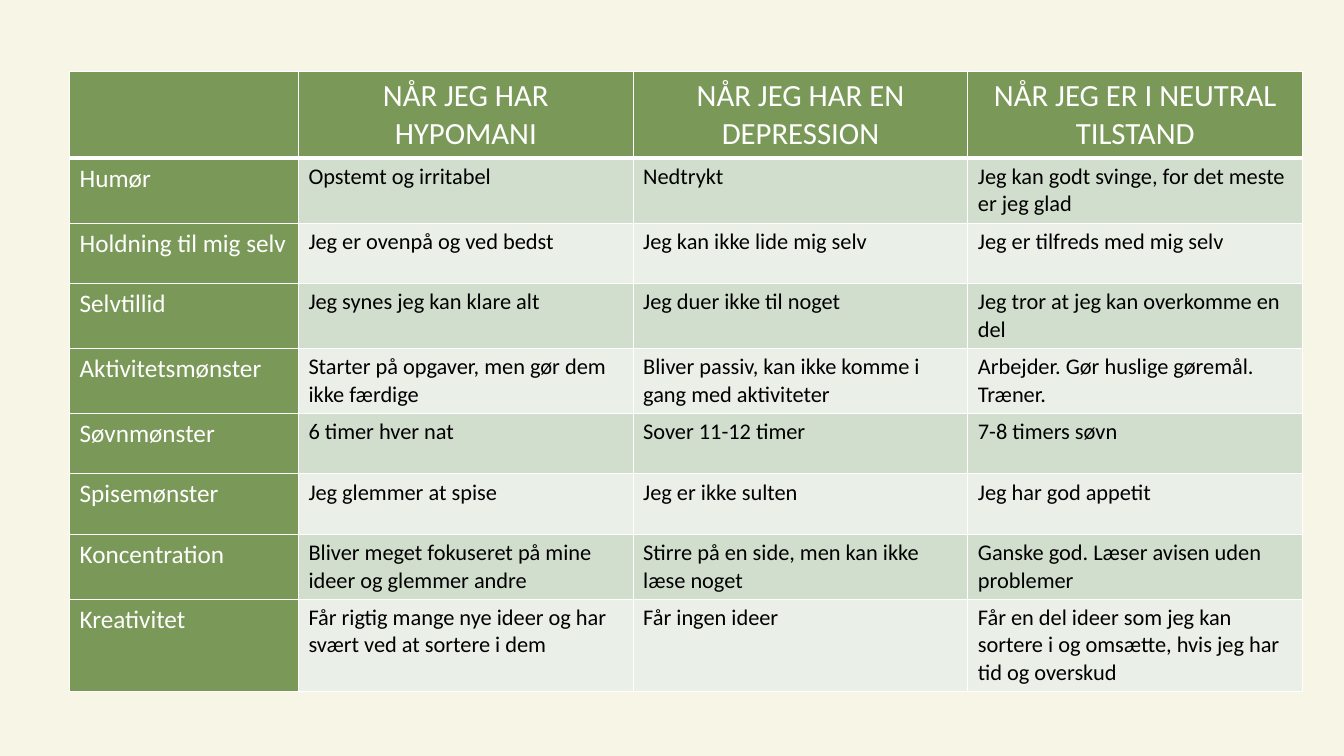
from dataclasses import dataclass

from lxml import etree
from pptx import Presentation
from pptx import util as u
from pptx.dml.color import RGBColor
from pptx.enum import text
from pptx.oxml import ns


@dataclass(frozen=True)
class Theme:
    """Colours, font and sizes of the slide."""
    background: str = "F7F6E6"
    green: str = "7A9857"
    bands: tuple = ("D2DECD", "EAEFE8")
    white: str = "FFFFFF"
    black: str = "000000"
    font: str = "Calibri"
    header_size: int = 22
    label_size: int = 18
    body_size: int = 16
    thin: int = 1
    thick: int = 3


THEME = Theme()
COLUMN_WIDTHS = (2.27, 3.32, 3.32, 3.32)
HEADER_HEIGHT = 0.86
ROW_HEIGHT = 0.6
HEADERS = ("", "NÅR JEG HAR HYPOMANI", "NÅR JEG HAR EN DEPRESSION",
           "NÅR JEG ER I NEUTRAL TILSTAND")
MOODS = (
    ("Humør", "Opstemt og irritabel", "Nedtrykt",
     "Jeg kan godt svinge, for det meste er jeg glad"),
    ("Holdning til mig selv", "Jeg er ovenpå og ved bedst",
     "Jeg kan ikke lide mig selv", "Jeg er tilfreds med mig selv"),
    ("Selvtillid", "Jeg synes jeg kan klare alt", "Jeg duer ikke til noget",
     "Jeg tror at jeg kan overkomme en del"),
    ("Aktivitetsmønster", "Starter på opgaver, men gør dem ikke færdige",
     "Bliver passiv, kan ikke komme i gang med aktiviteter",
     "Arbejder. Gør huslige gøremål. Træner."),
    ("Søvnmønster", "6 timer hver nat", "Sover 11-12 timer", "7-8 timers søvn"),
    ("Spisemønster", "Jeg glemmer at spise", "Jeg er ikke sulten",
     "Jeg har god appetit"),
    ("Koncentration", "Bliver meget fokuseret på mine ideer og glemmer andre",
     "Stirre på en side, men kan ikke læse noget",
     "Ganske god. Læser avisen uden problemer"),
    ("Kreativitet", "Får rigtig mange nye ideer og har svært ved at sortere i dem",
     "Får ingen ideer",
     "Får en del ideer som jeg kan sortere i og omsætte, hvis jeg har tid og overskud"),
)


def write_text(cell, content, *, size, color, align=text.PP_ALIGN.LEFT,
               anchor=text.MSO_ANCHOR.TOP):
    cell.vertical_anchor = anchor
    paragraph = cell.text_frame.paragraphs[0]
    paragraph.alignment = align
    paragraph.font.size = u.Pt(size)
    if content:
        run = paragraph.add_run()
        run.text = content
        run.font.name = THEME.font
        run.font.size = u.Pt(size)
        run.font.color.rgb = RGBColor.from_string(color)


def set_borders(cell, top, bottom):
    properties = cell._tc.get_or_add_tcPr()
    widths = {"L": THEME.thin, "R": THEME.thin, "T": top, "B": bottom}
    for side, width in widths.items():
        line = etree.SubElement(properties, ns.qn(f"a:ln{side}"), w=str(u.Pt(width)))
        fill = etree.SubElement(line, ns.qn("a:solidFill"))
        etree.SubElement(fill, ns.qn("a:srgbClr"), val=THEME.white)


def style_cell(cell, fill, top=THEME.thin, bottom=THEME.thin):
    set_borders(cell, top, bottom)
    cell.fill.solid()
    cell.fill.fore_color.rgb = RGBColor.from_string(fill)


def fill_header(table):
    for column, content in enumerate(HEADERS):
        cell = table.cell(0, column)
        style_cell(cell, THEME.green, bottom=THEME.thick)
        write_text(cell, content, size=THEME.header_size, color=THEME.white,
                   align=text.PP_ALIGN.CENTER, anchor=text.MSO_ANCHOR.MIDDLE)


def fill_body(table):
    for row, contents in enumerate(MOODS, start=1):
        top = THEME.thick if row == 1 else THEME.thin
        band = THEME.bands[(row - 1) % 2]
        for column, content in enumerate(contents):
            cell = table.cell(row, column)
            is_label = column == 0
            style_cell(cell, THEME.green if is_label else band, top=top)
            write_text(cell, content,
                       size=THEME.label_size if is_label else THEME.body_size,
                       color=THEME.white if is_label else THEME.black)


def add_mood_table(slide):
    height = HEADER_HEIGHT + ROW_HEIGHT * len(MOODS)
    shape = slide.shapes.add_table(
        len(MOODS) + 1, len(HEADERS), u.Inches(0.69), u.Inches(0.71),
        u.Inches(sum(COLUMN_WIDTHS)), u.Inches(height))
    table = shape.table
    table.first_col = True
    for column, width in zip(table.columns, COLUMN_WIDTHS):
        column.width = u.Inches(width)
    for index, row in enumerate(table.rows):
        row.height = u.Inches(ROW_HEIGHT if index else HEADER_HEIGHT)
    fill_header(table)
    fill_body(table)


def main():
    presentation = Presentation()
    presentation.slide_width = u.Inches(13.33)
    presentation.slide_height = u.Inches(7.5)
    slide = presentation.slides.add_slide(presentation.slide_layouts[6])
    slide.background.fill.solid()
    slide.background.fill.fore_color.rgb = RGBColor.from_string(THEME.background)
    add_mood_table(slide)
    presentation.save("out.pptx")


if __name__ == "__main__":
    main()
